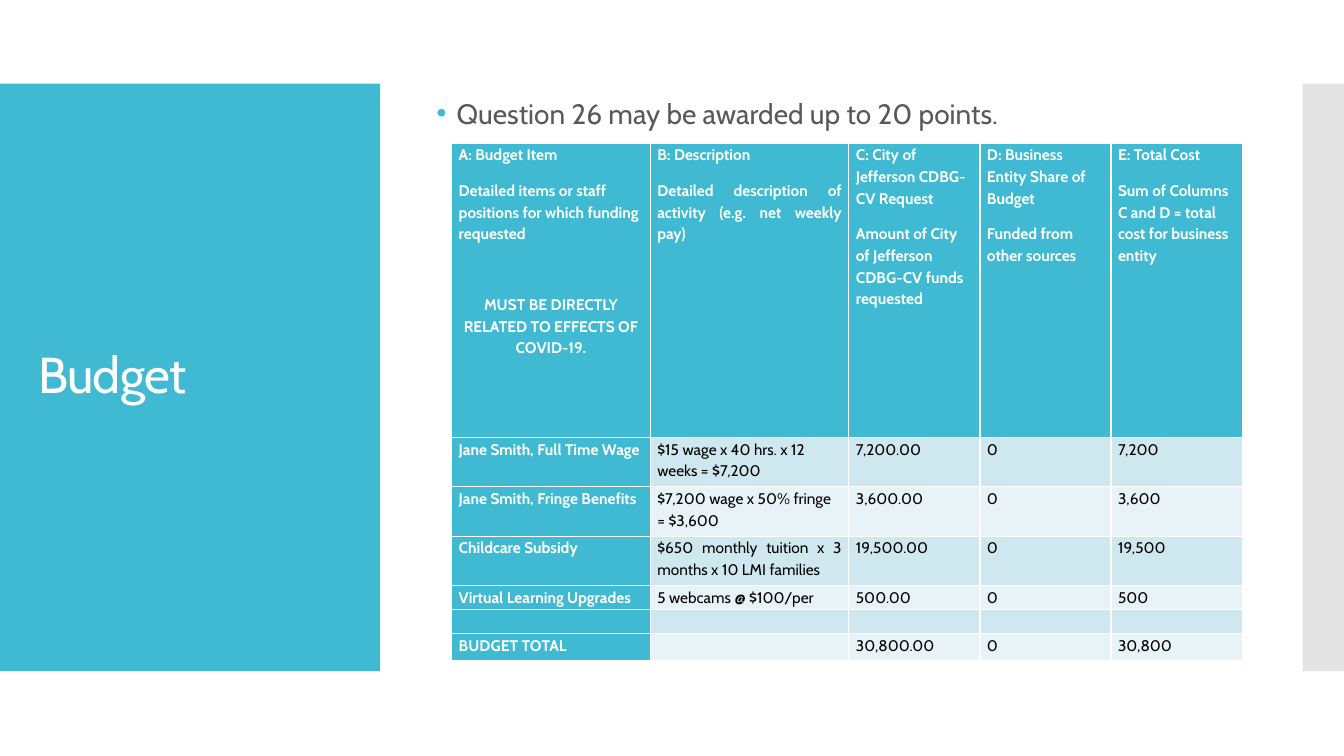
from lxml import etree
from pptx import Presentation
from pptx.dml.color import RGBColor
from pptx.enum.shapes import MSO_SHAPE
from pptx.enum.text import MSO_ANCHOR, MSO_AUTO_SIZE, PP_ALIGN
from pptx.oxml.ns import qn
from pptx.util import Inches, Pt

RECTANGLE = MSO_SHAPE.RECTANGLE
MIDDLE = MSO_ANCHOR.MIDDLE
NO_AUTOFIT = MSO_AUTO_SIZE.NONE
LEFT, CENTER, JUSTIFY = PP_ALIGN.LEFT, PP_ALIGN.CENTER, PP_ALIGN.JUSTIFY

FONT = "Cabin"
TEAL, GREY, WHITE, BLACK = "40BAD2", "C8C8C8", "FFFFFF", "000000"
BODY_GREY = "595959"
BANDS = ["CFE7EE", "E8F3F7"]


def rgb(color):
    return RGBColor.from_string(color)


def format_paragraph(paragraph, size, color, alignment, line_spacing, bold=False):
    paragraph.alignment = alignment
    paragraph.line_spacing = line_spacing
    paragraph.font.name = FONT
    paragraph.font.size = Pt(size)
    paragraph.font.bold = bold
    paragraph.font.color.rgb = rgb(color)


presentation = Presentation()
presentation.slide_width = Inches(13.33)
presentation.slide_height = Inches(7.5)
slide = presentation.slides.add_slide(presentation.slide_layouts[1])

for position, (left, width, color) in enumerate([(0, 3.77, TEAL), (12.92, 0.41, GREY)]):
    panel = slide.shapes.add_shape(
        RECTANGLE, Inches(left), Inches(0.83), Inches(width), Inches(5.83))
    panel.shadow.inherit = False
    panel.fill.solid()
    panel.fill.fore_color.rgb = rgb(color)
    panel.line.fill.background()
    slide.shapes.element.insert(2 + position, panel.element)
    if color == GREY:
        color_element = panel.element.spPr.find(".//" + qn("a:srgbClr"))
        etree.SubElement(color_element, qn("a:alpha"), val="50000")

title = slide.shapes.title
title.left, title.top = Inches(0.28), Inches(1.23)
title.width, title.height = Inches(3.22), Inches(5.03)
title.text_frame.text = "Budget"
title.text_frame.vertical_anchor = MIDDLE
title.text_frame.auto_size = NO_AUTOFIT
title_paragraph = title.text_frame.paragraphs[0]
format_paragraph(title_paragraph, 36, WHITE, LEFT, 0.9)
title_paragraph.runs[0]._r.get_or_add_rPr().set("spc", "-60")

body = slide.placeholders[1]
body.left, body.top = Inches(4.23), Inches(0.94)
body.width, body.height = Inches(8), Inches(5.6)
body.text_frame.text = "Question 26 may be awarded up to 20 points."
body.text_frame.auto_size = NO_AUTOFIT
body_paragraph = body.text_frame.paragraphs[0]
body_paragraph.space_before = Pt(12)
format_paragraph(body_paragraph, 20, BODY_GREY, LEFT, 0.9)
properties = body_paragraph._p.get_or_add_pPr()
properties.set("marL", str(Inches(0.2)))
properties.set("indent", str(-Inches(0.2)))
bullet_color = etree.Element(qn("a:buClr"))
etree.SubElement(bullet_color, qn("a:srgbClr"), val=TEAL)
bullet = etree.Element(qn("a:buChar"), char="•")
font_defaults = properties.find(qn("a:defRPr"))
font_defaults.addprevious(bullet_color)
font_defaults.addprevious(bullet)

header = [
    [("A: Budget Item", JUSTIFY),
     ("Detailed items or staff positions for which funding requested", LEFT),
     ("MUST BE DIRECTLY RELATED TO EFFECTS OF COVID-19.", CENTER)],
    [("B: Description", JUSTIFY),
     ("Detailed description of activity (e.g. net weekly pay)", JUSTIFY)],
    [("C: City of Jefferson CDBG-CV Request", LEFT),
     ("Amount of City of Jefferson CDBG-CV funds requested", LEFT)],
    [("D: Business Entity Share of Budget", LEFT),
     ("Funded from other sources", LEFT)],
    [("E: Total Cost", LEFT),
     ("Sum of Columns C and D = total cost for business entity", LEFT)],
]
items = [
    ["Jane Smith, Full Time Wage", "$15 wage x 40 hrs. x 12 weeks = $7,200",
     "7,200.00", "0", "7,200"],
    ["Jane Smith, Fringe Benefits", "$7,200 wage x 50% fringe = $3,600",
     "3,600.00", "0", "3,600"],
    ["Childcare Subsidy", "$650 monthly tuition x 3 months x 10 LMI families",
     "19,500.00", "0", "19,500"],
    ["Virtual Learning Upgrades", "5 webcams @ $100/per", "500.00", "0", "500"],
    ["", "", "", "", ""],
    ["BUDGET TOTAL", "", "30,800.00", "0", "30,800"],
]
left_aligned = {(1, 1), (2, 0), (2, 1), (3, 0), (4, 0)}
rows = [header]
for row_index, texts in enumerate(items, start=1):
    rows.append([
        [(text, LEFT if (row_index, column_index) in left_aligned else JUSTIFY)]
        for column_index, text in enumerate(texts)])

column_widths = [1.97, 1.97, 1.3, 1.3, 1.3]
row_heights = [2.92, 0.49, 0.49, 0.49, 0.24, 0.24, 0.27]
table = slide.shapes.add_table(
    len(row_heights), len(column_widths), Inches(4.48), Inches(1.42),
    Inches(sum(column_widths)), Inches(sum(row_heights))).table
table.first_col = True
for column, width in zip(table.columns, column_widths):
    column.width = Inches(width)
for row, height in zip(table.rows, row_heights):
    row.height = Inches(height)

for row_index, row_cells in enumerate(rows):
    for column_index, cell_paragraphs in enumerate(row_cells):
        cell = table.cell(row_index, column_index)
        heading = row_index == 0 or column_index == 0
        cell.margin_left = cell.margin_right = Inches(0.07)
        cell.margin_top = cell.margin_bottom = 0
        cell.fill.solid()
        cell.fill.fore_color.rgb = rgb(TEAL if heading else BANDS[(row_index - 1) % 2])
        cell.text = "\n".join(text for text, alignment in cell_paragraphs)
        for paragraph, (text, alignment) in zip(cell.text_frame.paragraphs, cell_paragraphs):
            format_paragraph(
                paragraph, 11, WHITE if heading else BLACK, alignment, 1.15, heading)
            paragraph.space_after = Pt(10)
            if alignment == CENTER:
                paragraph.space_before = Pt(25)
            if not text:
                paragraph._p.get_or_add_endParaRPr().set("sz", "1100")

presentation.save("out.pptx")
